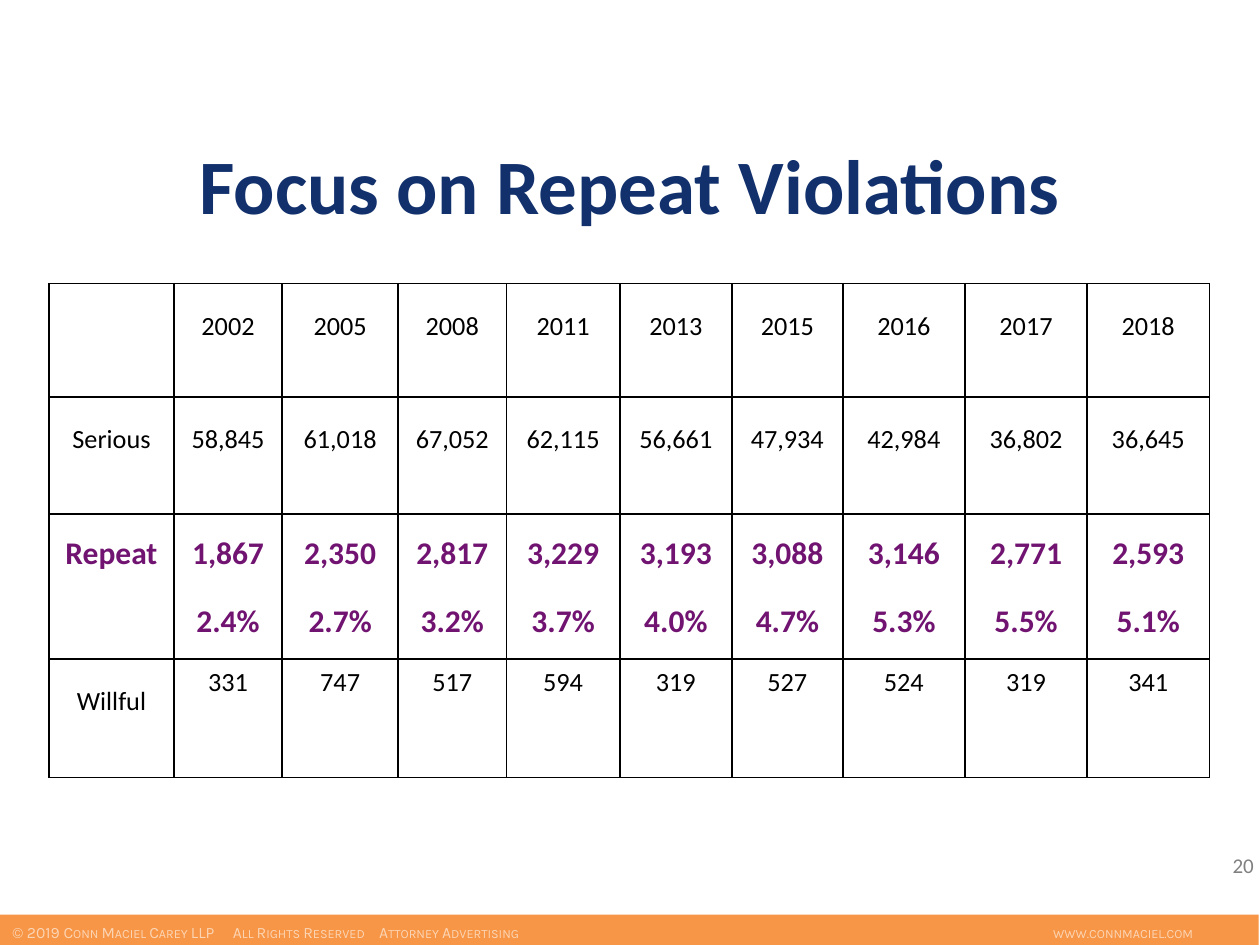
from lxml import etree
from pptx import Presentation
from pptx.dml.color import RGBColor
from pptx.enum.shapes import MSO_SHAPE
from pptx.enum.text import MSO_ANCHOR, PP_ALIGN
from pptx.oxml.ns import qn
from pptx.util import Inches, Pt

# Content
TITLE = "Focus on Repeat Violations"
PAGE_NUMBER = "20"
YEARS = ["2002", "2005", "2008", "2011", "2013", "2015", "2016", "2017", "2018"]
SERIOUS = ["58,845", "61,018", "67,052", "62,115", "56,661", "47,934", "42,984", "36,802", "36,645"]
REPEAT = ["1,867\n2.4%", "2,350\n2.7%", "2,817\n3.2%", "3,229\n3.7%", "3,193\n4.0%",
          "3,088\n4.7%", "3,146\n5.3%", "2,771\n5.5%", "2,593\n5.1%"]
WILLFUL = ["331", "747", "517", "594", "319", "527", "524", "319", "341"]
FOOTER = [("© 2019 ", False),
          ("Conn Maciel Carey LLP\tAll Rights Reserved\tAttorney Advertising\twww.connmaciel.com", True)]
FOOTER_TABS = [1.75, 2.91, 8.26]

COLORS = {"title": "11306C", "text": "000000", "repeat": "711371", "number": "808080",
          "footer": "F79646", "footer_text": "FCD5B5"}

# Rows: label, values, height, size, colour, bold, value line spacing, space after
ROWS = [
    ("", YEARS, 0.9, 15, "text", False, 30, 0),
    ("Serious", SERIOUS, 0.93, 15, "text", False, 30, 6),
    ("Repeat", REPEAT, 1.15, 18, "repeat", True, 30, 9),
    ("Willful", WILLFUL, 0.94, 15, "text", False, 19, 9),
]
LABEL_SPACING = 30
COLUMN_WIDTHS = [0.99, 0.86, 0.92, 0.86, 0.9, 0.89, 0.88, 0.97, 0.97, 0.97]


def rgb(name):
    return RGBColor.from_string(COLORS[name])


def set_font(font, size, color, bold=False, name="Calibri"):
    font.name, font.size, font.bold = name, Pt(size), bold
    font.color.rgb = rgb(color)


def add_text(slide, text, box, align, size, color, bold=False):
    frame = slide.shapes.add_textbox(*map(Inches, box)).text_frame
    frame.word_wrap = True
    frame.vertical_anchor = MSO_ANCHOR.MIDDLE
    paragraph = frame.paragraphs[0]
    paragraph.text = text
    paragraph.alignment = align
    set_font(paragraph.font, size, color, bold)


def set_borders(cell):
    properties = cell._tc.get_or_add_tcPr()
    for index, side in enumerate(("lnL", "lnR", "lnT", "lnB")):
        line = etree.Element(qn(f"a:{side}"), w=str(Pt(1)))
        fill = etree.SubElement(line, qn("a:solidFill"))
        etree.SubElement(fill, qn("a:srgbClr"), val=COLORS["text"])
        properties.insert(index, line)


def fill_cell(cell, text, size, color, bold, spacing, after):
    cell.fill.background()
    cell.margin_left = cell.margin_right = Inches(0.07)
    cell.margin_top = cell.margin_bottom = Inches(0.05)
    set_borders(cell)
    cell.text = text
    for paragraph in cell.text_frame.paragraphs:
        paragraph.alignment = PP_ALIGN.CENTER
        paragraph.line_spacing = Pt(spacing)
        paragraph.space_after = Pt(after)
        set_font(paragraph.font, size, color, bold)


def add_violations_table(slide):
    frame = slide.shapes.add_table(len(ROWS), len(COLUMN_WIDTHS), Inches(0.39), Inches(2.25),
                                   Inches(sum(COLUMN_WIDTHS)), Inches(sum(row[2] for row in ROWS)))
    table = frame.table
    table.first_row = table.horz_banding = False
    for column, width in zip(table.columns, COLUMN_WIDTHS):
        column.width = Inches(width)
    for r, (label, values, height, size, color, bold, spacing, after) in enumerate(ROWS):
        table.rows[r].height = Inches(height)
        for c, text in enumerate([label, *values]):
            fill_cell(table.cell(r, c), text, size, color, bold,
                      spacing if c else LABEL_SPACING, after if c else 0)


def add_footer(slide):
    bar = slide.shapes.add_shape(MSO_SHAPE.RECTANGLE, 0, Inches(7.26), Inches(9.99), Inches(0.26))
    bar.shadow.inherit = False
    bar.fill.solid()
    bar.fill.fore_color.rgb = rgb("footer")
    bar.line.fill.background()
    frame = bar.text_frame
    frame.word_wrap = True
    frame.vertical_anchor = MSO_ANCHOR.TOP
    paragraph = frame.paragraphs[0]
    paragraph.alignment = PP_ALIGN.LEFT
    paragraph.line_spacing = Pt(12)
    tabs = etree.SubElement(paragraph._p.get_or_add_pPr(), qn("a:tabLst"))
    for position in FOOTER_TABS:
        etree.SubElement(tabs, qn("a:tab"), pos=str(Inches(position)), algn="l")
    set_font(paragraph.font, 9, "footer_text", name="Karla")
    for text, small_caps in FOOTER:
        run = paragraph.add_run()
        run.text = text
        if small_caps:
            run._r.get_or_add_rPr().set("cap", "small")


def main():
    presentation = Presentation()
    presentation.slide_width, presentation.slide_height = Inches(10), Inches(7.5)
    slide = presentation.slides.add_slide(presentation.slide_layouts[6])
    add_text(slide, PAGE_NUMBER, (7.72, 6.67, 2.33, 0.4), PP_ALIGN.RIGHT, 12, "number")
    add_text(slide, TITLE, (0.75, 0.92, 8.5, 1.08), PP_ALIGN.CENTER, 44, "title", True)
    add_violations_table(slide)
    add_footer(slide)
    presentation.save("out.pptx")


if __name__ == "__main__":
    main()
